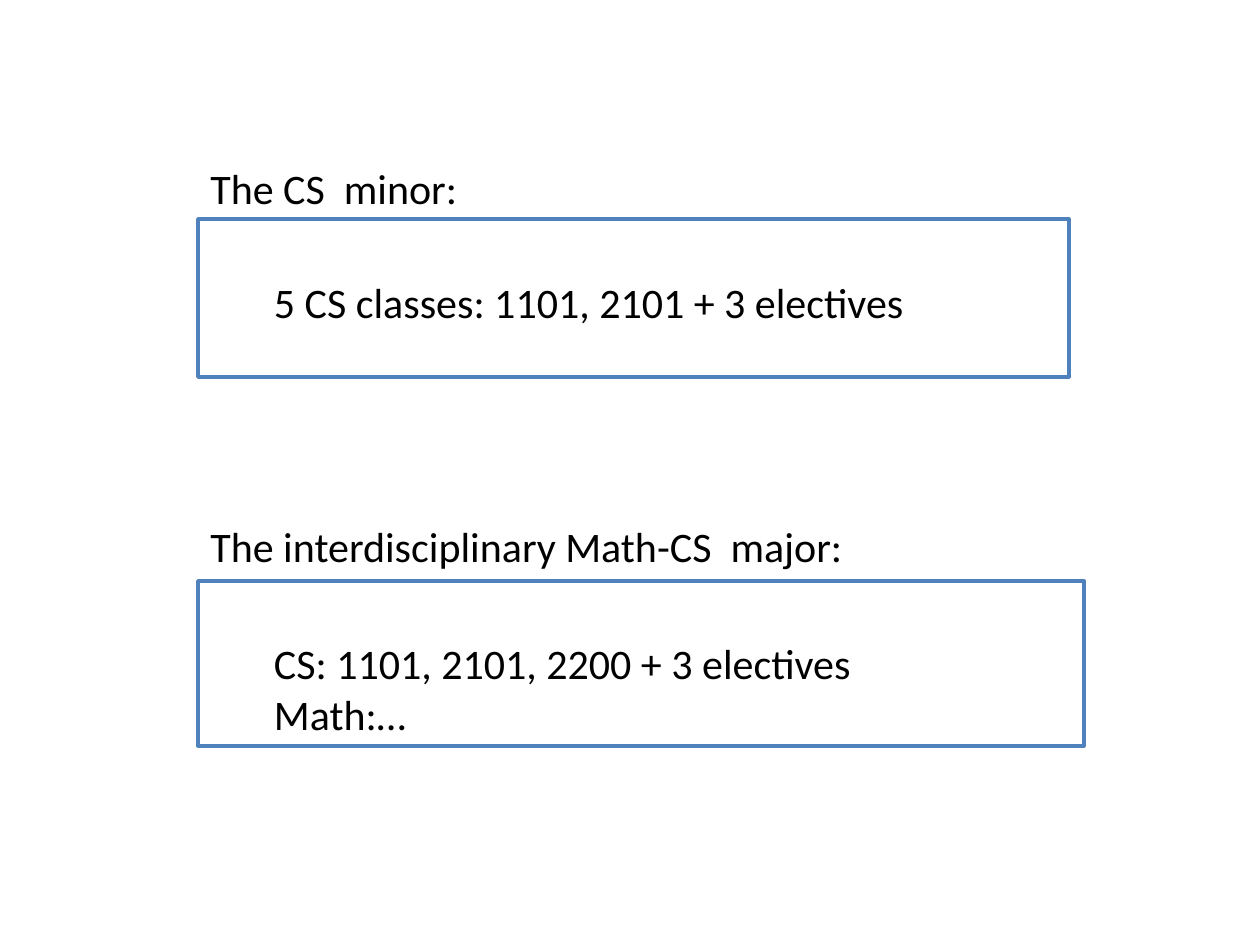
import pptx
import pptx.dml.color
import pptx.enum.shapes
import pptx.enum.text
import pptx.util

PX = 914400 / 126
COLORS = {"text": "000000", "fill": "FFFFFF", "line": "4F81BD"}
FONT = "Calibri"
SIZE = 24
LEFT = 198
INSET = 13
INDENT = 63
LINE_HEIGHT = 51


def px(n):
    return pptx.util.Emu(round(n * PX))


def rgb(name):
    return pptx.dml.color.RGBColor.from_string(COLORS[name])


class Deck:
    def __init__(self, width, height):
        self.prs = pptx.Presentation()
        self.prs.slide_width = px(width)
        self.prs.slide_height = px(height)
        self.s = self.prs.slides.add_slide(self.prs.slide_layouts[6])

    def set_lines(self, tf, lines):
        tf.vertical_anchor = pptx.enum.text.MSO_ANCHOR.TOP
        for i, line in enumerate(lines):
            p = tf.add_paragraph() if i else tf.paragraphs[0]
            p.text = line
            p.alignment = pptx.enum.text.PP_ALIGN.LEFT
            p.font.name = FONT
            p.font.size = pptx.util.Pt(SIZE)
            p.font.color.rgb = rgb("text")

    def label(self, top, width, text):
        sp = self.s.shapes.add_textbox(px(LEFT), px(top), px(width), px(63))
        sp.text_frame.word_wrap = False
        self.set_lines(sp.text_frame, [text])

    def box(self, top, width, height, lines):
        sp = self.s.shapes.add_shape(
            pptx.enum.shapes.MSO_SHAPE.RECTANGLE, px(LEFT), px(top), px(width), px(height))
        sp.shadow.inherit = False
        sp.fill.solid()
        sp.fill.fore_color.rgb = rgb("fill")
        sp.line.color.rgb = rgb("line")
        sp.line.width = pptx.util.Pt(2)
        tf = sp.text_frame
        tf.word_wrap = True
        tf.margin_left = px(INSET + INDENT)
        tf.margin_top = px(6 + LINE_HEIGHT)
        self.set_lines(tf, lines)


def main():
    deck = Deck(1260, 945)
    deck.box(219, 871, 158, ["5 CS classes: 1101, 2101 + 3 electives"])
    deck.box(581, 886, 165, ["CS: 1101, 2101, 2200 + 3 electives", "Math:…"])
    deck.label(514, 665, "The interdisciplinary Math-CS  major:")
    deck.label(156, 275, "The CS  minor:")
    deck.prs.save("out.pptx")


if __name__ == "__main__":
    main()
